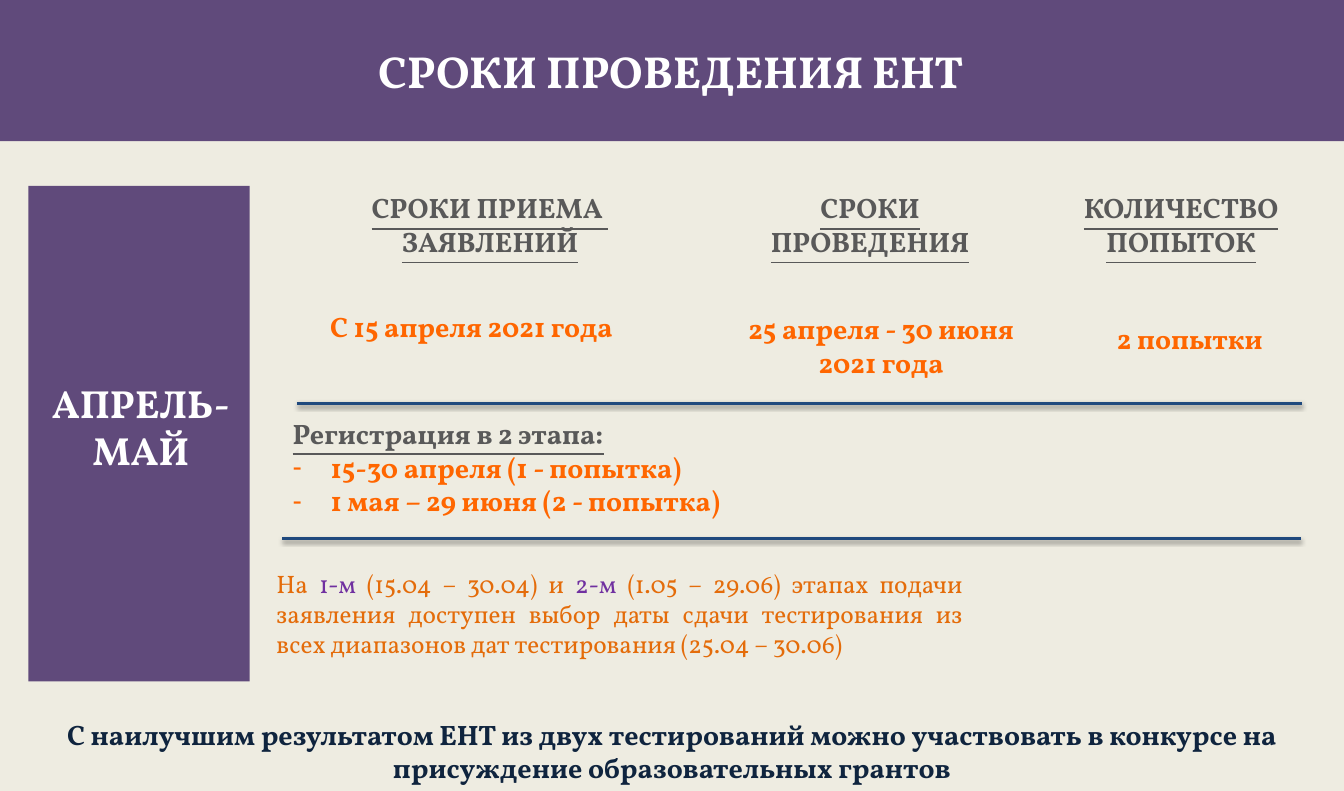
from lxml import etree
from pptx import Presentation
from pptx.dml.color import RGBColor
from pptx.enum.shapes import MSO_CONNECTOR, MSO_SHAPE
from pptx.enum.text import MSO_ANCHOR, MSO_AUTO_SIZE, PP_ALIGN
from pptx.oxml.ns import qn
from pptx.util import Pt

CENTER, LEFT, JUSTIFY = PP_ALIGN.CENTER, PP_ALIGN.LEFT, PP_ALIGN.JUSTIFY
TOP, MIDDLE = MSO_ANCHOR.TOP, MSO_ANCHOR.MIDDLE
RECTANGLE, STRAIGHT = MSO_SHAPE.RECTANGLE, MSO_CONNECTOR.STRAIGHT
NO_AUTOFIT = MSO_AUTO_SIZE.NONE

CREAM = RGBColor(0xEE, 0xEC, 0xE1)
PURPLE = RGBColor(0x60, 0x4A, 0x7B)
VIOLET = RGBColor(0x70, 0x30, 0xA0)
GRAY = RGBColor(0x59, 0x59, 0x59)
ORANGE = RGBColor(0xFF, 0x66, 0x00)
DARK_ORANGE = RGBColor(0xE4, 0x6C, 0x0A)
BLUE = RGBColor(0x1F, 0x49, 0x7D)
NAVY = RGBColor(0x0F, 0x24, 0x3E)
WHITE = RGBColor(0xFF, 0xFF, 0xFF)
FONT = "Vollkorn"

WIDTH, HEIGHT = 958.1, 564.2
HEADER_TOP, TWO_LINES, ONE_LINE = 132.6, 55.4, 31.7
INDENT = 27

TITLE = "СРОКИ ПРОВЕДЕНИЯ ЕНТ"
MONTHS = ["АПРЕЛЬ-", "МАЙ"]
# header lines, header (left, width), value, value (left, top, width, height)
COLUMNS = [
    (["СРОКИ ПРИЕМА ", "ЗАЯВЛЕНИЙ"], (219.8, 259.2),
     "С 15 апреля 2021 года", (211.6, 217.4, 249.1, ONE_LINE)),
    (["СРОКИ ПРОВЕДЕНИЯ"], (535.7, 169.2),
     "25 апреля - 30 июня 2021 года", (511.2, 218.6, 234, TWO_LINES)),
    (["КОЛИЧЕСТВО ПОПЫТОК"], (756.8, 170.6),
     "2 попытки", (762.5, 225.8, 171.4, ONE_LINE)),
]
REGISTRATION = "Регистрация в 2 этапа:"
STAGES = ["15-30 апреля (1 - попытка)", "1 мая – 29 июня (2 - попытка)"]
NOTE = [
    ("На ", DARK_ORANGE),
    ("1-м ", VIOLET),
    ("(15.04 – 30.04) и ", DARK_ORANGE),
    ("2-м", VIOLET),
    (" (1.05 – 29.06) этапах подачи заявления доступен выбор даты сдачи "
     "тестирования из всех диапазонов дат тестирования (25.04 – 30.06)", DARK_ORANGE),
]
CONCLUSION = ("С наилучшим результатом ЕНТ из двух тестирований можно участвовать "
              "в конкурсе на присуждение образовательных грантов")
DIVIDERS = [(211.7, 928.1, 287.7), (201.4, 927.4, 384.2)]  # left, right, y


def place(shape, left, top, width, height):
    shape.left, shape.top = Pt(left), Pt(top)
    shape.width, shape.height = Pt(width), Pt(height)


def style(paragraph, size, color, align=CENTER, bold=True, underline=False):
    paragraph.alignment = align
    paragraph.space_before = Pt(0)
    font = paragraph.font
    font.name, font.size, font.bold, font.underline = FONT, Pt(size), bold, underline
    font.color.rgb = color


def write(shape, lines, size, color, anchor=TOP, **options):
    frame = shape.text_frame
    frame.word_wrap, frame.auto_size, frame.vertical_anchor = True, NO_AUTOFIT, anchor
    frame.text = "\n".join(lines)
    for paragraph in frame.paragraphs:
        style(paragraph, size, color, **options)


def add_text(slide, box, lines, size, color, **options):
    shape = slide.shapes.add_textbox(*map(Pt, box))
    write(shape, lines, size, color, **options)
    return shape


def add_block(slide, *box):
    block = slide.shapes.add_shape(RECTANGLE, *map(Pt, box))
    block.shadow.inherit = False
    block.fill.solid()
    block.fill.fore_color.rgb = PURPLE
    block.line.fill.background()
    return block


def add_divider(slide, left, right, y):
    line = slide.shapes.add_connector(STRAIGHT, Pt(left), Pt(y), Pt(right), Pt(y))
    line.line.color.rgb = BLUE
    line.line.width = Pt(2)
    effects = etree.SubElement(line.element.spPr, qn("a:effectLst"))
    shadow = etree.SubElement(effects, qn("a:outerShdw"), blurRad=str(Pt(3.1)),
                              dist=str(Pt(1.6)), dir="5400000", rotWithShape="0")
    color = etree.SubElement(shadow, qn("a:srgbClr"), val="000000")
    etree.SubElement(color, qn("a:alpha"), val="38000")


def set_bullet(paragraph, character=None):
    """Give the paragraph a hanging bullet, or none at all."""
    properties = paragraph._p.get_or_add_pPr()
    indent = Pt(INDENT) if character else 0
    properties.set("marL", str(indent))
    properties.set("indent", str(-indent))
    if character:
        etree.SubElement(properties, qn("a:buChar"), char=character)
    else:
        etree.SubElement(properties, qn("a:buNone"))
    defaults = properties.find(qn("a:defRPr"))
    if defaults is not None:
        properties.append(defaults)


def main():
    presentation = Presentation()
    presentation.slide_width, presentation.slide_height = Pt(WIDTH), Pt(HEIGHT)
    slide = presentation.slides.add_slide(presentation.slide_layouts[1])
    slide.background.fill.solid()
    slide.background.fill.fore_color.rgb = CREAM

    title, registration = slide.placeholders
    band = add_block(slide, 0, 0, WIDTH, 100.8)
    title.element.addprevious(band.element)
    place(title, 28.3, 32.4, 901.4, 35.3)
    write(title, [TITLE], 32, WHITE, anchor=MIDDLE)

    add_block(slide, 20.2, HEADER_TOP, 157.8, 353.4)
    months = add_block(slide, 28.1, 266.9, 144.7, 74.9)
    write(months, MONTHS, 28, WHITE)

    for header, (left, width), value, value_box in COLUMNS:
        add_text(slide, (left, HEADER_TOP, width, TWO_LINES), header, 20, GRAY,
                 underline=True)
        add_text(slide, value_box, [value], 20, ORANGE)

    for divider in DIVIDERS:
        add_divider(slide, *divider)

    place(registration, 201.4, 293.4, 408.2, 79.9)
    write(registration, [REGISTRATION, *STAGES], 20, ORANGE, align=LEFT)
    heading, *stages = registration.text_frame.paragraphs
    style(heading, 20, GRAY, align=LEFT, underline=True)
    set_bullet(heading)
    for stage in stages:
        set_bullet(stage, "-")

    note = add_text(slide, (190, 401.5, 503.3, 72.7), [""], 18, DARK_ORANGE,
                    align=JUSTIFY, bold=False)
    for text, color in NOTE:
        run = note.text_frame.paragraphs[0].add_run()
        run.text = text
        run.font.color.rgb = color

    add_text(slide, (0, 508, WIDTH, TWO_LINES), [CONCLUSION], 20, NAVY)
    presentation.save("out.pptx")


if __name__ == "__main__":
    main()
